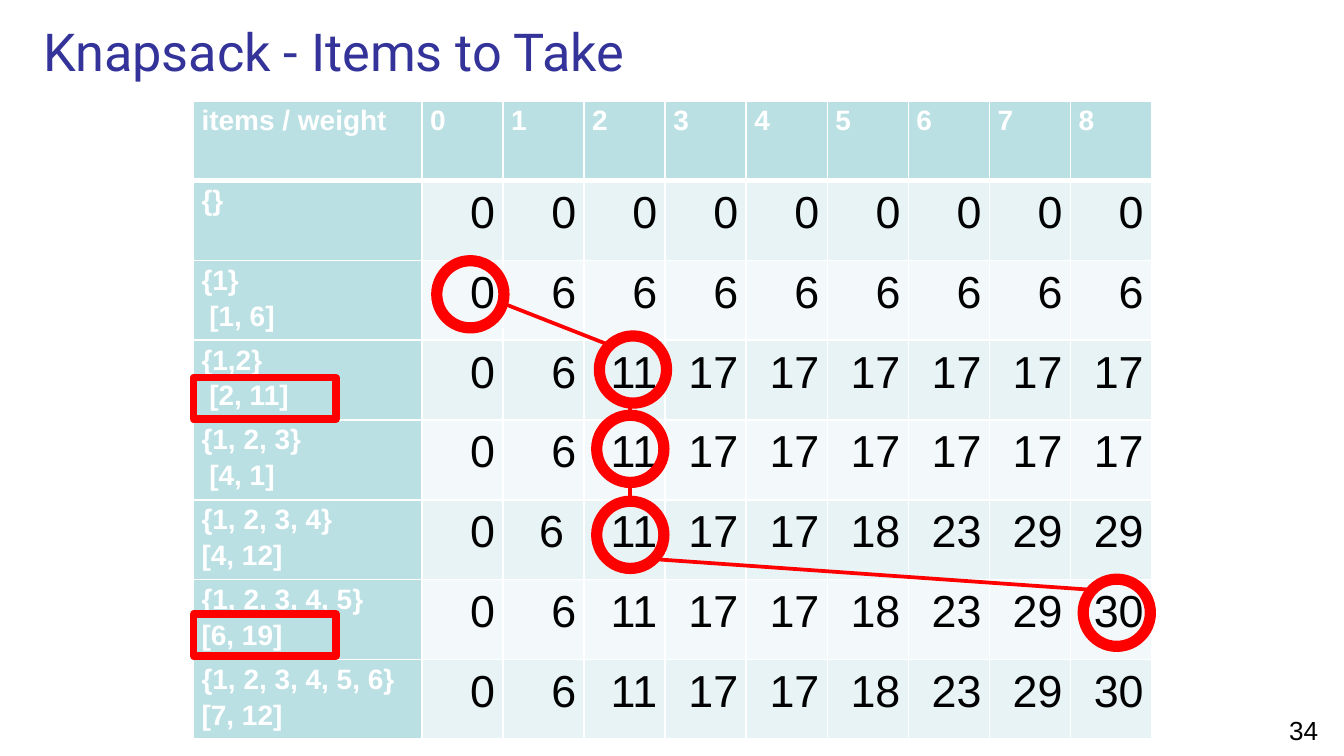
from lxml import etree
from pptx import Presentation
from pptx import util as u
from pptx.dml.color import RGBColor
from pptx.enum import shapes, text
from pptx.oxml.ns import qn

PX = 9144  # 100 px to the inch
WIDE = 1000
HUES = {"title": "333399", "head": "BBE0E3", "odd": "E7F3F4",
        "even": "F3F9FA", "white": "FFFFFF", "black": "000000",
        "mark": "FF0000"}
SETS = ["{}", "{1}\v [1, 6]", "{1,2}\v [2, 11]", "{1, 2, 3}\v [4, 1]",
        "{1, 2, 3, 4} \v[4, 12]", "{1, 2, 3, 4, 5}\v[6, 19]",
        "{1, 2, 3, 4, 5, 6}\v[7, 12]"]
BEST = [[0] * 9,
        [0] + [6] * 8,
        [0, 6, 11] + [17] * 6,
        [0, 6, 11] + [17] * 6,
        [0, 6, 11, 17, 17, 18, 23, 29, 29],
        [0, 6, 11, 17, 17, 18, 23, 29, 30],
        [0, 6, 11, 17, 17, 18, 23, 29, 30]]
# Offsets from the top left corner of the table
RINGS = [(662, 356), (300, 298), (300, 234), (302, 175), (181, 119)]
STEPS = [(670, 364, 342, 341), (325, 298, 325, 283),
         (325, 238, 325, 222), (310, 182, 231, 151)]
TAKEN = [(0, 206), (0, 382)]


def px(*nums):
    return [u.Emu(round(n * PX)) for n in nums]


def hue(name):
    return RGBColor.from_string(HUES[name])


def style(frame, size, name, face="Arial", bold=False,
          align=text.PP_ALIGN.LEFT, gap=None):
    for para in frame.paragraphs:
        para.alignment = align
        if gap:
            para.line_spacing = gap
        for run in para.runs:
            font = run.font
            font.size, font.bold, font.name = u.Pt(size), bold, face
            font.color.rgb = hue(name)


def edge(cell, side, width):
    """Draw one white border; must come before the cell's fill."""
    props = cell._tc.get_or_add_tcPr()
    line = etree.SubElement(props, qn("a:ln" + side), w=str(u.Pt(width)))
    fill = etree.SubElement(line, qn("a:solidFill"))
    etree.SubElement(fill, qn("a:srgbClr"), val=HUES["white"])


def heading(slide, box):
    title = slide.shapes.title
    title.left, title.top, title.width, title.height = px(*box)
    frame = title.text_frame
    frame.text = "Knapsack - Items to Take"
    frame.vertical_anchor = text.MSO_ANCHOR.MIDDLE
    style(frame, 28, "title", "Roboto")


def number(slide, box):
    frame = slide.shapes.add_textbox(*px(*box)).text_frame
    frame.word_wrap = True
    frame.text = "34"
    style(frame, 14, "black", align=text.PP_ALIGN.CENTER)


def grid(slide, box):
    rows = [["items / weight", *range(9)]]
    rows += [[name, *vals] for name, vals in zip(SETS, BEST)]
    table = slide.shapes.add_table(len(rows), 10, *px(*box)).table
    first = 170
    for i, col in enumerate(table.columns):
        col.width = px((box[2] - first) / 9 if i else first)[0]
    for r, row in enumerate(rows):
        table.rows[r].height = px(box[3] / len(rows))[0]
        for c, val in enumerate(row):
            cell = table.cell(r, c)
            cell.margin_left, cell.margin_right = px(6, 6)
            cell.margin_top = cell.margin_bottom = 0
            for side in "LRTB":
                thick = (r, side) in [(0, "B"), (1, "T")]
                edge(cell, side, 3 if thick else 1)
            label = r == 0 or c == 0
            cell.fill.solid()
            cell.fill.fore_color.rgb = hue(
                "head" if label else "odd" if r % 2 else "even")
            cell.text_frame.text = str(val)
            if label:
                style(cell.text_frame, 15, "white", bold=True, gap=1.15)
            else:
                style(cell.text_frame, 24, "black", gap=1.15,
                      align=text.PP_ALIGN.RIGHT)
    table.cell(5, 2).margin_right = px(15)[0]


def mark(slide, kind, box, width):
    shape = slide.shapes.add_shape(kind, *px(*box))
    shape.shadow.inherit = False
    shape.fill.background()
    shape.line.color.rgb = hue("mark")
    shape.line.width = u.Pt(width)


def trace(slide, box):
    """Ring the path through the table and frame the items taken."""
    x, y = box[:2]
    for dx, dy in RINGS:
        mark(slide, shapes.MSO_SHAPE.OVAL, (x + dx, y + dy, 50, 50), 6)
    for x1, y1, x2, y2 in STEPS:
        line = slide.shapes.add_connector(
            shapes.MSO_CONNECTOR.STRAIGHT,
            *px(x + x1, y + y1, x + x2, y + y2))
        line.line.color.rgb = hue("mark")
        line.line.width = u.Pt(2)
        etree.SubElement(line._element.spPr, qn("a:effectLst"))
    for dx, dy in TAKEN:
        mark(slide, shapes.MSO_SHAPE.RECTANGLE, (x + dx, y + dy, 106, 31), 4)


def main():
    deck = Presentation()
    deck.slide_width, deck.slide_height = px(WIDE, WIDE * 9 / 16)
    slide = deck.slides.add_slide(deck.slide_layouts[5])
    heading(slide, (22, 8, 974, 59))
    number(slide, (940, 527, 60, 30))
    area = (144, 75, 713, 475)
    grid(slide, area)
    trace(slide, area)
    deck.save("out.pptx")


if __name__ == "__main__":
    main()
